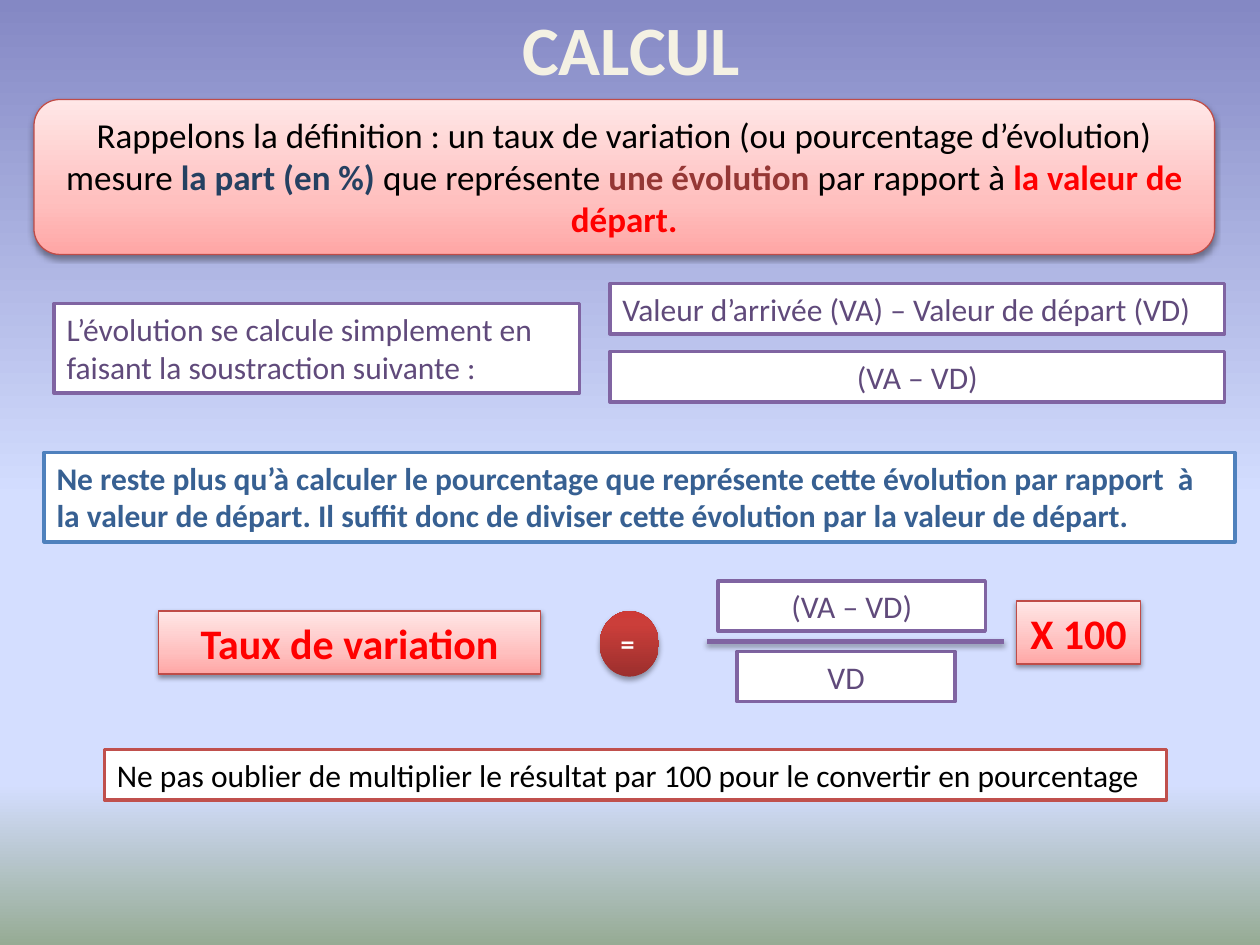
"""Build the CALCUL slide that explains how a rate of change is computed."""
from dataclasses import dataclass

from lxml.etree import SubElement
from pptx import Presentation
from pptx.dml.color import RGBColor as RGB
from pptx.enum.shapes import MSO_CONNECTOR as LINE, MSO_SHAPE as SHAPE
from pptx.enum.text import MSO_ANCHOR as ANCHOR, MSO_AUTO_SIZE as FIT, PP_ALIGN as ALIGN
from pptx.oxml.ns import qn
from pptx.util import Pt

PX = 9144


@dataclass(frozen=True)
class Theme:
    font: str = "Calibri"
    title_size: float = 39.6
    formula_size: int = 24
    lead_size: int = 20
    body_size: int = 18
    sign_size: int = 16
    white: str = "FFFFFF"
    black: str = "000000"
    red: str = "FF0000"
    brick: str = "C0504D"
    brick_text: str = "953735"
    brick_edge: str = "BF4C48"
    purple: str = "8064A2"
    purple_text: str = "604A7B"
    blue: str = "4F81BD"
    blue_text: str = "376092"
    navy: str = "254061"
    cream: str = "F4F1E3"
    title_edge: str = "054697"
    sky: tuple = ((0, "8488C4"), (53, "D4DEFF"), (83, "D4DEFF"), (100, "96AB94"))
    pink: tuple = ((0, "FFA6A5"), (35, "FFC0BF"), (100, "FFE7E7"))
    ruby: tuple = ((0, "9C2F2D"), (80, "CB3E3A"), (100, "CE3B37"))


T = Theme()


def set_gradient(fill, root, stops, angle):
    fill.gradient()
    fill.gradient_angle = angle
    stop_list = next(root.iter(qn("a:gsLst")))
    stop_list.clear()
    for pos, color in stops:
        stop = SubElement(stop_list, qn("a:gs"), pos=str(pos * 1000))
        SubElement(stop, qn("a:srgbClr"), val=color)


def add_shadow(effects, alpha, dist):
    shadow = SubElement(effects, qn("a:outerShdw"), blurRad=str(Pt(3.1)),
                        dist=str(Pt(dist)), dir="5400000", rotWithShape="0")
    color = SubElement(shadow, qn("a:srgbClr"), val=T.black)
    SubElement(color, qn("a:alpha"), val=str(alpha * 1000))


prs = Presentation()
prs.slide_width, prs.slide_height = 1000 * PX, 750 * PX
s = prs.slides.add_slide(prs.slide_layouts[5])
set_gradient(s.background.fill, s._element, T.sky, 270)

title = s.shapes.title
title.left, title.top, title.width, title.height = 51 * PX, 0, 900 * PX, 76 * PX
title.text_frame.auto_size = FIT.NONE
title.text_frame.vertical_anchor = ANCHOR.MIDDLE

purple_edge = (T.purple, 0.75)
LEFT, CENTER = ALIGN.LEFT, ALIGN.CENTER
texts = [(title, CENTER, T.title_size, (T.title_edge, 1), [("CALCUL", T.cream, True)])]

plain_boxes = [
    ((484, 225, 488, 40), T.purple, LEFT, purple_edge, T.purple_text, False,
     "Valeur d’arrivée (VA) – Valeur de départ (VD)"),
    ((35, 359, 945, 71), T.blue, LEFT, None, T.blue_text, True,
     "Ne reste plus qu’à calculer le pourcentage que représente cette évolution par rapport  à "
     "la valeur de départ. Il suffit donc de diviser cette évolution par la valeur de départ."),
    ((43, 241, 417, 71), T.purple, LEFT, purple_edge, T.purple_text, False,
     "L’évolution se calcule simplement en faisant la soustraction suivante :"),
    ((484, 279, 488, 40), T.purple, CENTER, purple_edge, T.purple_text, False, "(VA – VD)"),
    ((83, 595, 843, 40), T.brick, LEFT, None, T.black, False,
     "Ne pas oublier de multiplier le résultat par 100 pour le convertir en pourcentage"),
    ((585, 517, 173, 40), T.purple, CENTER, purple_edge, T.purple_text, False, "VD"),
    ((570, 461, 212, 40), T.purple, CENTER, purple_edge, T.purple_text, False, "(VA – VD)"),
]
for box, border, align, edge, color, bold, text in plain_boxes:
    sp = s.shapes.add_shape(SHAPE.RECTANGLE, *(v * PX for v in box))
    sp.shadow.inherit = False
    sp.fill.solid()
    sp.fill.fore_color.rgb = RGB.from_string(T.white)
    sp.line.color.rgb = RGB.from_string(border)
    sp.line.width = Pt(2)
    texts.append((sp, align, T.body_size, edge, [(text, color, bold)]))

definition = [
    ("Rappelons la définition : un taux de variation (ou pourcentage d’évolution) mesure ",
     T.black, False),
    ("la part (en %) ", T.navy, True),
    ("que représente ", T.black, False),
    ("une évolution ", T.brick_text, True),
    ("par rapport à ", T.black, False),
    ("la valeur de départ.", T.red, True),
]
glossy_shapes = [
    (SHAPE.ROUNDED_RECTANGLE, (27, 79, 937, 123), T.pink, T.brick_edge, 38, 1.6,
     CENTER, T.lead_size, definition),
    (SHAPE.RECTANGLE, (126, 485, 303, 50), T.pink, T.brick_edge, 38, 1.6,
     CENTER, T.formula_size, [("Taux de variation", T.red, True)]),
    (SHAPE.OVAL, (476, 485, 47, 52), T.ruby, None, 35, 1.8,
     LEFT, T.sign_size, [("=", T.white, True)]),
    (SHAPE.RECTANGLE, (807, 477, 98, 50), T.pink, T.brick_edge, 38, 1.6,
     CENTER, T.formula_size, [("X 100", T.red, True)]),
]
for kind, box, stops, border, alpha, dist, align, size, runs in glossy_shapes:
    sp = s.shapes.add_shape(kind, *(v * PX for v in box))
    set_gradient(sp.fill, sp._element, stops, 90)
    if border:
        sp.line.color.rgb = RGB.from_string(border)
        sp.line.width = Pt(0.75)
    else:
        sp.line.fill.background()
    sp.shadow.inherit = False
    add_shadow(sp._element.spPr.find(qn("a:effectLst")), alpha, dist)
    texts.append((sp, align, size, None, runs))

bar = s.shapes.add_connector(LINE.STRAIGHT, 561 * PX, 509 * PX, 797 * PX, 509 * PX)
bar.line.color.rgb = RGB.from_string(T.purple)
bar.line.width = Pt(3)
add_shadow(SubElement(bar._element.spPr, qn("a:effectLst")), 35, 1.8)

for sp, align, size, edge, runs in texts:
    tf = sp.text_frame
    tf.word_wrap = True
    if sp is not title:
        tf.auto_size = FIT.SHAPE_TO_FIT_TEXT
        tf.vertical_anchor = ANCHOR.TOP
    p = tf.paragraphs[0]
    p.alignment = align
    for text, color, bold in runs:
        r = p.add_run()
        r.text = text
        r.font.name, r.font.size, r.font.bold = T.font, Pt(size), bold
        r.font.color.rgb = RGB.from_string(color)
        if edge:
            outline = SubElement(r.font._element, qn("a:ln"), w=str(Pt(edge[1])))
            r.font._element.insert(0, outline)
            SubElement(SubElement(outline, qn("a:solidFill")), qn("a:srgbClr"), val=edge[0])

prs.save("out.pptx")
